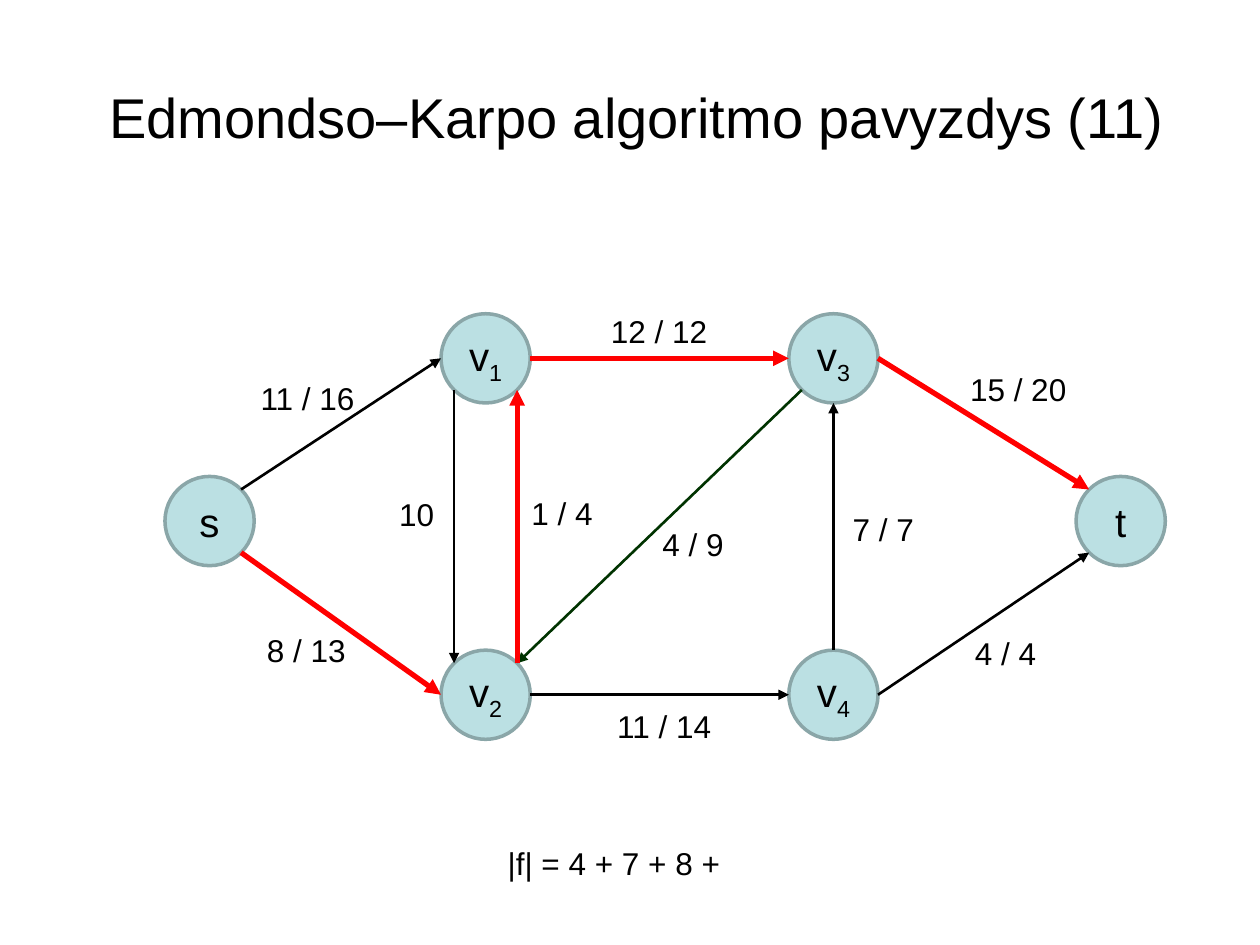
from math import cos, radians, sin

from lxml.etree import SubElement
from pptx import Presentation
from pptx.dml.color import RGBColor
from pptx.enum.shapes import MSO_CONNECTOR, MSO_SHAPE
from pptx.enum.text import MSO_ANCHOR, MSO_AUTO_SIZE, PP_ALIGN
from pptx.oxml.ns import qn
from pptx.util import Pt

BLACK = RGBColor(0x00, 0x00, 0x00)
RED = RGBColor(0xFF, 0x00, 0x00)
DARK_GREEN = RGBColor(0x00, 0x33, 0x00)
NODE_FILL = RGBColor(0xBB, 0xE0, 0xE3)
NODE_LINE = RGBColor(0x8A, 0xA6, 0xA8)

DIAMETER = 51

# Node centres: two rows of inner vertices between source and sink
LEFT, RIGHT = 277.5, 476.25
TOP, MIDDLE, BOTTOM = 204.75, 297.75, 397
NODES = {
    "v1": (LEFT, TOP),
    "v3": (RIGHT, TOP),
    "v2": (LEFT, BOTTOM),
    "v4": (RIGHT, BOTTOM),
    "s": (119.75, MIDDLE),
    "t": (640.4, MIDDLE),
}

# Directions on a node's rim, in degrees clockwise from east
E, SE, S, SW, W, NW, N, NE = range(0, 360, 45)

# Start, its side, end, its side, colour, width
EDGES = [
    ("s", NE, "v1", W, BLACK, 1.5),
    ("v1", E, "v3", W, RED, 3),
    ("s", SE, "v2", W, RED, 3),
    ("v2", E, "v4", W, BLACK, 1.5),
    ("v3", SW, "v2", NE, DARK_GREEN, 1.5),
    ("v1", SW, "v2", NW, BLACK, 1.5),
    ("v2", NE, "v1", SE, RED, 3),
    ("v4", N, "v3", S, BLACK, 1.5),
    ("v3", E, "t", NW, RED, 3),
    ("v4", E, "t", SW, BLACK, 1.5),
]

# Flow / capacity with left, top and width
LABELS = [
    ("11 / 16", 141.8, 213, 68.5),
    ("12 / 12", 342, 175, 70),
    ("7 / 7", 480.2, 288, 49.5),
    ("8 / 13", 145.4, 357, 60),
    ("10", 221, 279.4, 34.5),
    ("1 / 4", 296.6, 278.6, 49.5),
    ("4 / 9", 371.5, 296.6, 49.5),
    ("11 / 14", 345.6, 400.3, 68.5),
    ("4 / 4", 550, 358.5, 49.5),
    ("15 / 20", 547.2, 208, 70),
    ("|f| = 4 + 7 + 8 +", 283, 478.8, 137),
]


def rim_point(node, angle):
    x, y = NODES[node]
    radius = DIAMETER / 2
    return x + radius * cos(radians(angle)), y + radius * sin(radians(angle))


class FlowSlide:
    font_name = "Arial"

    def __init__(self, slide):
        self.slide = slide

    def add_run(self, paragraph, text, size):
        run = paragraph.add_run()
        run.text = text
        run.font.name = self.font_name
        run.font.size = Pt(size)
        run.font.color.rgb = BLACK
        return run

    def title(self, text):
        box = self.slide.shapes.add_textbox(Pt(40), Pt(21.6), Pt(648), Pt(90))
        frame = box.text_frame
        frame.word_wrap = True
        frame.vertical_anchor = MSO_ANCHOR.MIDDLE
        frame.paragraphs[0].alignment = PP_ALIGN.CENTER
        self.add_run(frame.paragraphs[0], text, 32)

    def label(self, text, left, top, width):
        box = self.slide.shapes.add_textbox(Pt(left), Pt(top), Pt(width), Pt(29))
        frame = box.text_frame
        frame.word_wrap = False
        frame.auto_size = MSO_AUTO_SIZE.SHAPE_TO_FIT_TEXT
        self.add_run(frame.paragraphs[0], text, 18)

    def node(self, name):
        x, y = NODES[name]
        circle = self.slide.shapes.add_shape(
            MSO_SHAPE.OVAL, Pt(x - DIAMETER / 2), Pt(y - DIAMETER / 2),
            Pt(DIAMETER), Pt(DIAMETER))
        circle.shadow.inherit = False
        circle.fill.solid()
        circle.fill.fore_color.rgb = NODE_FILL
        circle.line.color.rgb = NODE_LINE
        circle.line.width = Pt(2)
        frame = circle.text_frame
        frame.word_wrap = False
        frame.vertical_anchor = MSO_ANCHOR.MIDDLE
        paragraph = frame.paragraphs[0]
        paragraph.alignment = PP_ALIGN.CENTER
        letter, index = name[0], name[1:]
        self.add_run(paragraph, letter, 23)
        if index:
            subscript = self.add_run(paragraph, index, 23)
            subscript._r.get_or_add_rPr().set("baseline", "-25000")

    def edge(self, start, start_side, end, end_side, color, width):
        ends = rim_point(start, start_side) + rim_point(end, end_side)
        arrow = self.slide.shapes.add_connector(
            MSO_CONNECTOR.STRAIGHT, *(Pt(value) for value in ends))
        arrow.line.color.rgb = color
        arrow.line.width = Pt(width)
        SubElement(arrow.line._get_or_add_ln(), qn("a:tailEnd"), type="triangle")
        SubElement(arrow._element.spPr, qn("a:effectLst"))


def main():
    presentation = Presentation()
    presentation.slide_width, presentation.slide_height = Pt(720), Pt(540)
    blank = presentation.slide_layouts[6]
    flow = FlowSlide(presentation.slides.add_slide(blank))

    # Heading
    flow.title("Edmondso–Karpo algoritmo pavyzdys (11)")

    # Flow network
    for name in NODES:
        flow.node(name)
    for edge in EDGES:
        flow.edge(*edge)

    # Edge labels and total flow
    for label in LABELS:
        flow.label(*label)

    presentation.save("out.pptx")


if __name__ == "__main__":
    main()
